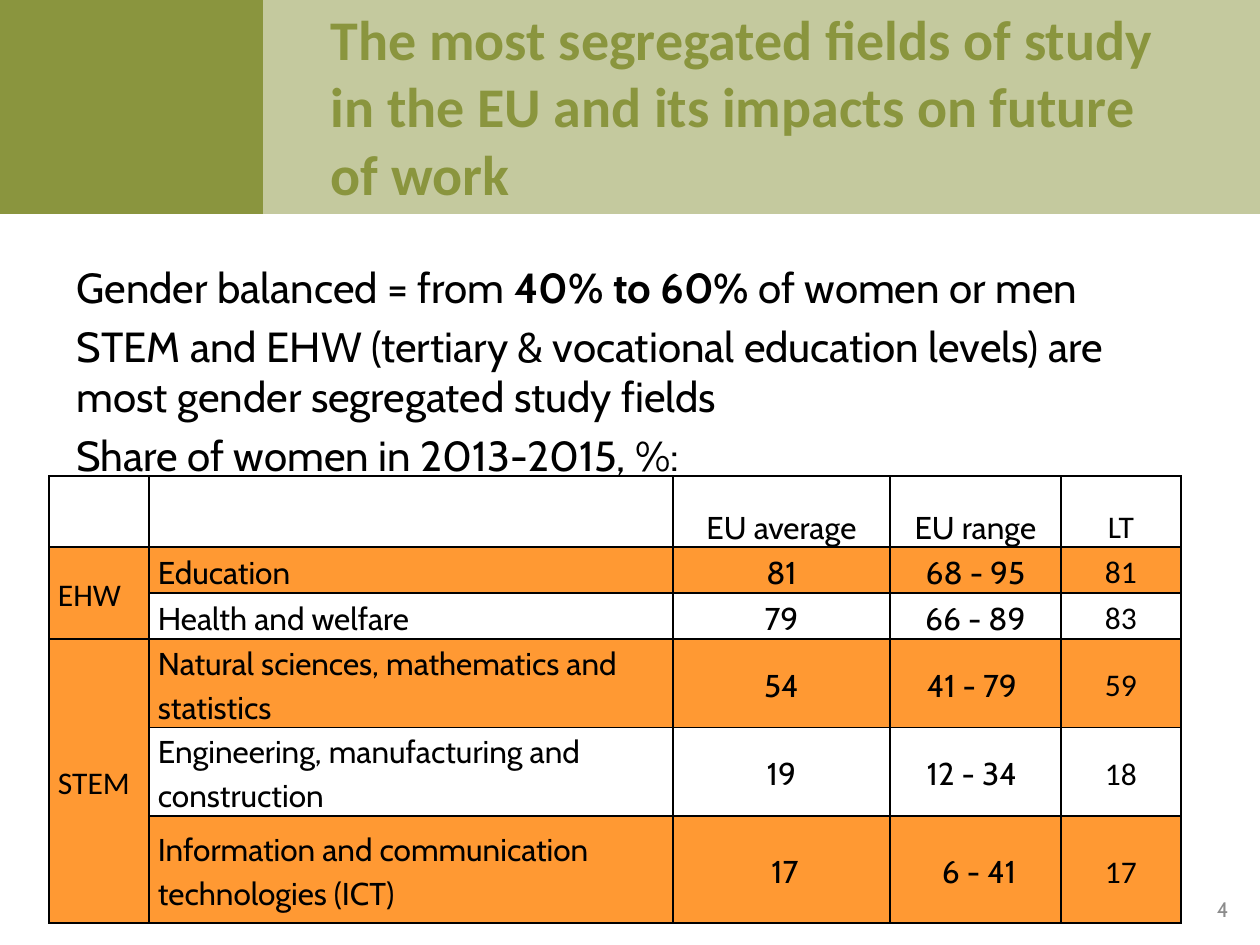
import pptx
import pptx.util
import pptx.dml.color
import pptx.enum.text
import pptx.enum.shapes
import pptx.oxml.ns
from lxml import etree

# Content
TITLE = "The most segregated fields of study in the EU and its impacts on future of work"
BODY = [
    [("Gender balanced = from ", False), ("40% to 60% ", True), ("of women or men", False)],
    [("STEM and EHW (tertiary & vocational education levels) are "
      "most gender segregated study fields", False)],
    [("Share of women in 2013-2015, %:", False)],
]
ROWS = [
    ("", "", "EU average", "EU range", "LT"),
    ("EHW", "Education", "81", "68 - 95", "81"),
    ("", "Health and welfare", "79", "66 - 89", "83"),
    ("STEM", "Natural sciences, mathematics and statistics", "54", "41 - 79 ", "59"),
    ("", "Engineering, manufacturing and construction", "19", "12 - 34 ", "18"),
    ("", "Information and communication technologies (ICT)", " 17", " 6 - 41", "17"),
]
SPANS = [(1, 2), (3, 5)]
WIDTHS = [100, 524, 217, 171, 120]
HEIGHTS = [71, 46, 46, 88, 88, 107]
NUMBER = "4"

GREEN, ORANGE, BLACK, GREY = "8A953E", "FF9933", "000000", "8C8C8C"
SCALE = 914400 / 126
Pt = pptx.util.Pt
ALIGN = pptx.enum.text.PP_ALIGN
ANCHOR = pptx.enum.text.MSO_ANCHOR
qn = pptx.oxml.ns.qn


def px(n):
    return pptx.util.Emu(round(n * SCALE))


def color(code):
    return pptx.dml.color.RGBColor.from_string(code)


def style(item, **values):
    for key, value in values.items():
        setattr(item, key, value)


def place(shape, *box):
    style(shape, **dict(zip(("left", "top", "width", "height"), map(px, box))))


def write(para, text, size, face, code, bold=False):
    run = para.add_run()
    run.text = text
    style(run.font, size=Pt(size), name=face, bold=bold)
    run.font.color.rgb = color(code)


def band(order, left, width, alpha=None):
    shape = slide.shapes.add_shape(
        pptx.enum.shapes.MSO_SHAPE.RECTANGLE, px(left), 0, px(width), px(214))
    shape.shadow.inherit = False
    shape.fill.solid()
    shape.fill.fore_color.rgb = color(GREEN)
    shape.line.fill.background()
    if alpha:
        tint = shape.fill._xPr.find(".//" + qn("a:srgbClr"))
        etree.SubElement(tint, qn("a:alpha"), val=str(alpha * 1000))
    slide.shapes._spTree.insert(2 + order, shape._element)


def border(cell):
    props = cell._tc.get_or_add_tcPr()
    for spot, side in enumerate(("lnL", "lnR", "lnT", "lnB")):
        line = etree.Element(qn("a:" + side), w=str(Pt(1)))
        fill = etree.SubElement(line, qn("a:solidFill"))
        etree.SubElement(fill, qn("a:srgbClr"), val=BLACK)
        props.insert(spot, line)


deck = pptx.Presentation()
style(deck, slide_width=px(1260), slide_height=px(945))
slide = deck.slides.add_slide(deck.slide_layouts[1])

# Header bands, behind the title
band(0, 0, 263)
band(1, 263, 997, alpha=50)

# Title
title = slide.shapes.title
place(title, 318, 28, 880, 155)
style(title.text_frame, vertical_anchor=ANCHOR.MIDDLE, word_wrap=True,
      auto_size=pptx.enum.text.MSO_AUTO_SIZE.NONE)
para = title.text_frame.paragraphs[0]
para.alignment = ALIGN.LEFT
write(para, TITLE, 32, "Calibri", GREEN, True)

# Body
body = slide.placeholders[1]
place(body, 64, 255, 1133, 665)
frame = body.text_frame
style(frame, word_wrap=True, auto_size=pptx.enum.text.MSO_AUTO_SIZE.NONE)
for i, parts in enumerate(BODY):
    para = frame.add_paragraph() if i else frame.paragraphs[0]
    props = para._p.get_or_add_pPr()
    style(para, space_before=Pt(4.8 if i else 0))
    props.set("marL", "0")
    props.set("indent", "0")
    etree.SubElement(props, qn("a:buNone"))
    for text, bold in parts:
        write(para, text, 24, "Cabin", BLACK, bold)

# Table
table = slide.shapes.add_table(
    len(ROWS), len(WIDTHS), px(49), px(476), px(sum(WIDTHS)), px(sum(HEIGHTS))).table
style(table, first_row=False, horz_banding=False)
for col, width in zip(table.columns, WIDTHS):
    col.width = px(width)
for row, height in zip(table.rows, HEIGHTS):
    row.height = px(height)
for r, texts in enumerate(ROWS):
    for c, text in enumerate(texts):
        cell = table.cell(r, c)
        style(cell, margin_left=px(9), margin_right=px(9), margin_top=0, margin_bottom=0,
              vertical_anchor=ANCHOR.MIDDLE if r else ANCHOR.BOTTOM)
        if r % 2 or (r and c == 0):
            cell.fill.solid()
            cell.fill.fore_color.rgb = color(ORANGE)
        else:
            cell.fill.background()
        border(cell)
        if text:
            para = cell.text_frame.paragraphs[0]
            style(para, line_spacing=1.15, space_after=Pt(10),
                  alignment=ALIGN.CENTER if c > 1 else ALIGN.LEFT)
            write(para, text, 18, "Calibri" if c in (0, 4) else "Cabin", BLACK)
for first, last in SPANS:
    table.cell(first, 0).merge(table.cell(last, 0))

# Slide number
box = slide.shapes.add_textbox(px(1186), px(890), px(55), px(39))
style(box.text_frame, word_wrap=True, vertical_anchor=ANCHOR.MIDDLE)
para = box.text_frame.paragraphs[0]
para.alignment = ALIGN.RIGHT
write(para, NUMBER, 12, "Cabin", GREY)

deck.save("out.pptx")
